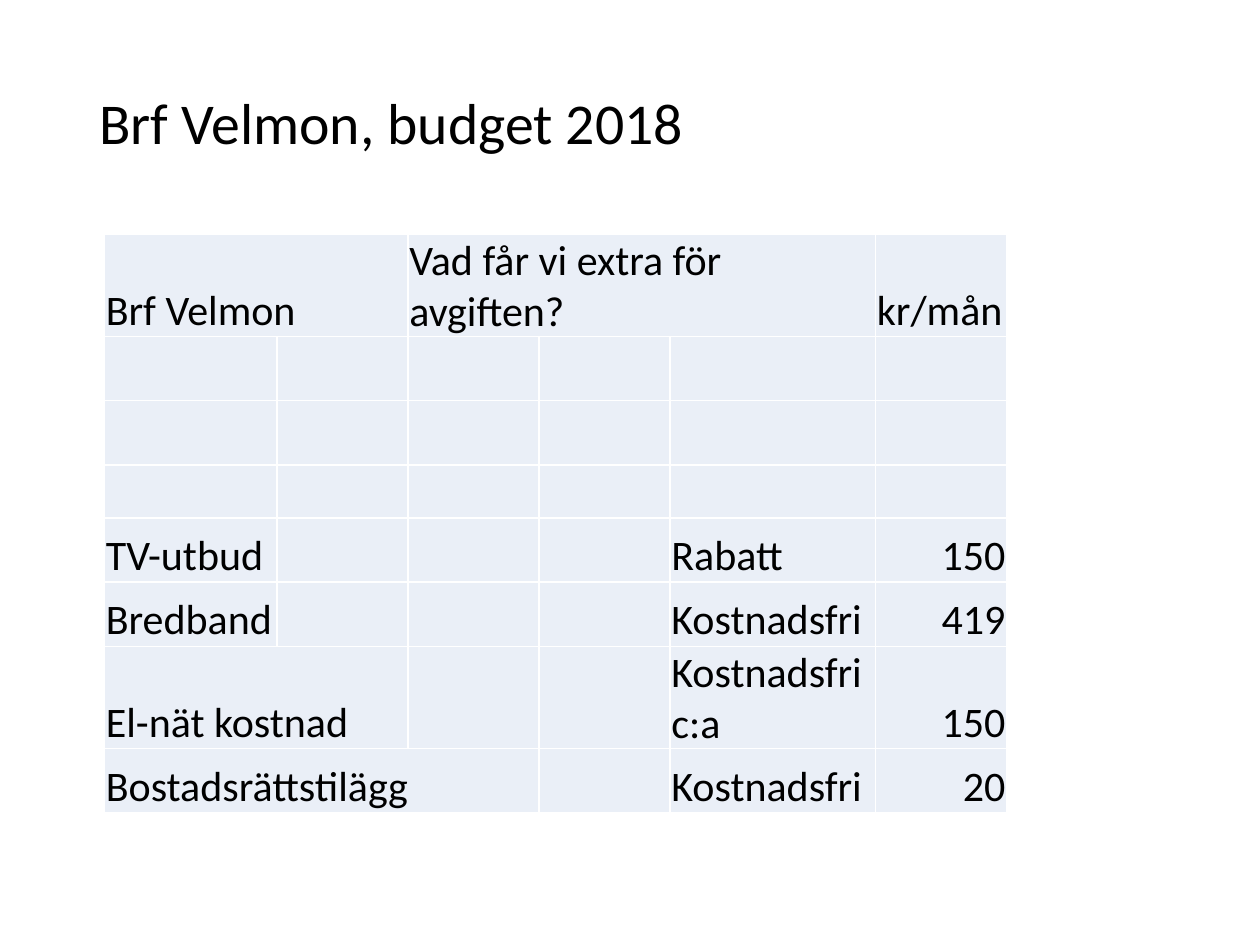
import pptx
import pptx.util
import pptx.dml.color
import pptx.enum.text
import pptx.oxml
import pptx.oxml.ns
from dataclasses import dataclass

Inches = pptx.util.Inches
Pt = pptx.util.Pt
RGBColor = pptx.dml.color.RGBColor
PP_ALIGN = pptx.enum.text.PP_ALIGN
MSO_ANCHOR = pptx.enum.text.MSO_ANCHOR


@dataclass(frozen=True)
class Theme:
    font: str = "Calibri"
    text: str = "000000"
    cell: str = "EAEFF7"
    border: str = "FFFFFF"
    title_size: int = 33
    table_size: int = 24


theme = Theme()
association = "Brf Velmon"


def add_run(paragraph, text, size):
    run = paragraph.add_run()
    run.text = text
    run.font.name = theme.font
    run.font.size = Pt(size)
    run.font.color.rgb = RGBColor.from_string(theme.text)


def add_borders(cell):
    properties = cell._tc.get_or_add_tcPr()
    for side in ("lnL", "lnR", "lnT", "lnB"):
        properties.append(pptx.oxml.parse_xml(
            f'<a:{side} {pptx.oxml.ns.nsdecls("a")} w="{Pt(1)}"><a:solidFill>'
            f'<a:srgbClr val="{theme.border}"/></a:solidFill></a:{side}>'))


presentation = pptx.Presentation()
presentation.slide_width = Inches(10)
presentation.slide_height = Inches(7.5)
slide = presentation.slides.add_slide(presentation.slide_layouts[6])

# Title
title = slide.shapes.add_textbox(Inches(0.69), Inches(0.68), Inches(8.62), Inches(0.63))
title.text_frame.word_wrap = True
title.text_frame.vertical_anchor = MSO_ANCHOR.MIDDLE
paragraph = title.text_frame.paragraphs[0]
paragraph.line_spacing = 0.9
add_run(paragraph, f"{association}, budget 2018", theme.title_size)

# Budget table: text by row and column, with merged column ranges
column_widths = [1.37, 1.04, 1.04, 1.04, 1.63, 1.04]
row_heights = [0.58, 0.51, 0.51, 0.42, 0.51, 0.51, 0.51, 0.51]
budget_rows = {
    0: {0: association, 2: "Vad får vi extra för avgiften?", 5: "kr/mån"},
    4: {0: "TV-utbud", 4: "Rabatt", 5: "150"},
    5: {0: "Bredband", 4: "Kostnadsfri", 5: "419"},
    6: {0: "El-nät kostnad", 4: "Kostnadsfri c:a", 5: "150"},
    7: {0: "Bostadsrättstilägg", 4: "Kostnadsfri", 5: "20"},
}
merges = [(0, 0, 1), (0, 2, 4), (6, 0, 1), (7, 0, 2)]

table = slide.shapes.add_table(
    len(row_heights), len(column_widths), Inches(0.83), Inches(1.86),
    Inches(sum(column_widths)), Inches(sum(row_heights))).table
table.first_row = False
table.horz_banding = False
for column, width in zip(table.columns, column_widths):
    column.width = Inches(width)
for row, height in zip(table.rows, row_heights):
    row.height = Inches(height)
for row_index, first, last in merges:
    table.cell(row_index, first).merge(table.cell(row_index, last))

# Cell formatting and text
for row_index in range(len(row_heights)):
    for column_index in range(len(column_widths)):
        cell = table.cell(row_index, column_index)
        add_borders(cell)
        cell.fill.solid()
        cell.fill.fore_color.rgb = RGBColor.from_string(theme.cell)
        text = budget_rows.get(row_index, {}).get(column_index)
        if text is None:
            continue
        cell.margin_left = cell.margin_right = cell.margin_top = Inches(0.01)
        cell.margin_bottom = 0
        cell.vertical_anchor = MSO_ANCHOR.BOTTOM
        paragraph = cell.text_frame.paragraphs[0]
        if text.isdigit():
            paragraph.alignment = PP_ALIGN.RIGHT
        add_run(paragraph, text, theme.table_size)

presentation.save("out.pptx")
